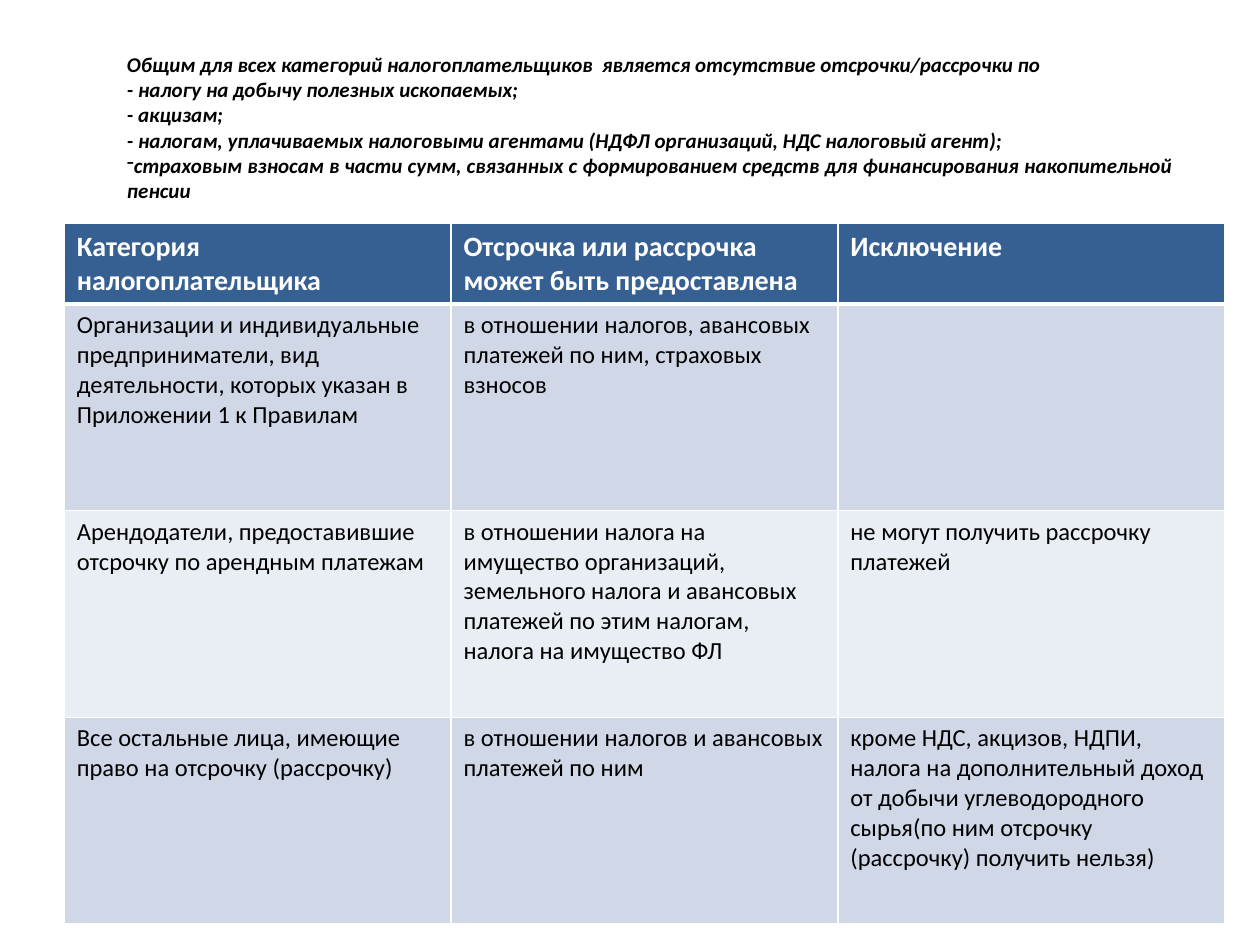
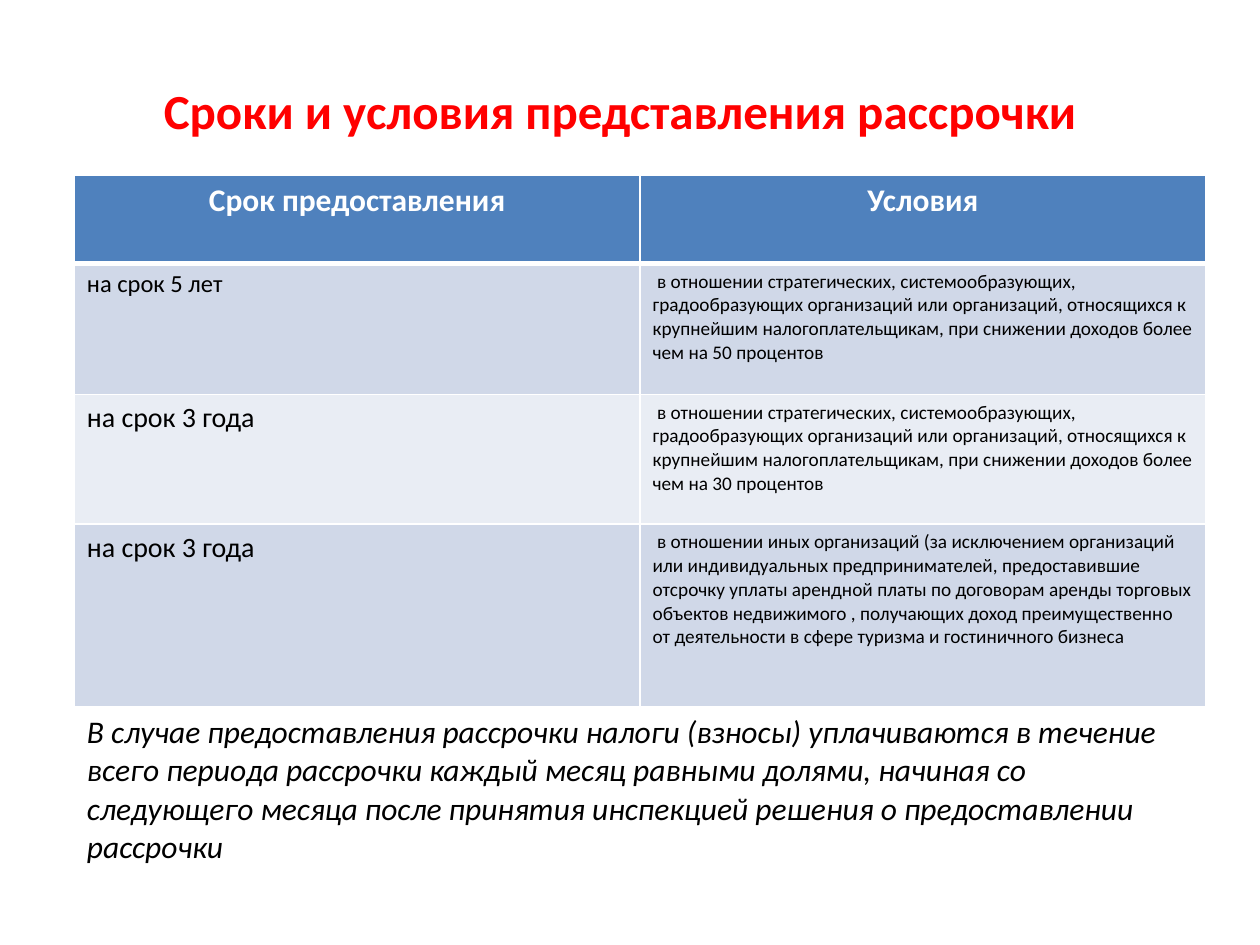
from pptx import Presentation
from pptx.dml.color import RGBColor as Rgb
from pptx.enum.text import MSO_ANCHOR as Anchor, PP_ALIGN as Align
from pptx.oxml.ns import qn
from pptx.util import Inches, Pt
from lxml.etree import SubElement as Sub

HUES = {"white": "FFFFFF", "black": "000000", "red": "FF0000",
        "navy": "376092", "blue": "4F81BD",
        "dark": "D0D8E8", "light": "E9EDF4"}
FONT = "Calibri"

RULES = [
    "Общим для всех категорий налогоплательщиков  является отсутствие отсрочки/рассрочки по",
    "- налогу на добычу полезных ископаемых;",
    "- акцизам;",
    "- налогам, уплачиваемых налоговыми агентами (НДФЛ организаций, НДС налоговый агент);",
]
DASHED = ("страховым взносам в части сумм, связанных с формированием средств "
          "для финансирования накопительной пенсии")

GROUPS = [
    ["Категория налогоплательщика",
     "Отсрочка или рассрочка может быть предоставлена",
     "Исключение"],
    ["Организации и индивидуальные предприниматели, вид деятельности, "
     "которых указан в Приложении 1 к Правилам",
     "в отношении налогов, авансовых платежей по ним, страховых взносов",
     ""],
    ["Арендодатели, предоставившие отсрочку по арендным платежам",
     "в отношении налога на имущество организаций, земельного налога и "
     "авансовых платежей по этим налогам, налога на имущество ФЛ",
     "не могут получить рассрочку платежей"],
    ["Все остальные лица, имеющие право на отсрочку (рассрочку)",
     "в отношении налогов и авансовых платежей по ним",
     "кроме НДС, акцизов, НДПИ, налога на дополнительный доход от добычи "
     "углеводородного сырья(по ним отсрочку (рассрочку) получить нельзя)"],
]

LARGE = (" в отношении стратегических, системообразующих, градообразующих "
         "организаций или организаций, относящихся к крупнейшим "
         "налогоплательщикам, при снижении доходов более чем на {} процентов")
TERMS = [
    ["Срок предоставления", "Условия"],
    ["на срок 5 лет", LARGE.format(50)],
    ["на срок 3 года", LARGE.format(30)],
    ["на срок 3 года",
     " в отношении иных организаций (за исключением организаций или "
     "индивидуальных предпринимателей, предоставившие отсрочку уплаты "
     "арендной платы по договорам аренды торговых объектов недвижимого , "
     "получающих доход преимущественно от деятельности в сфере туризма и "
     "гостиничного бизнеса"],
    ["", ""],
]
NOTE = ("В случае предоставления рассрочки налоги (взносы) уплачиваются в "
        "течение всего периода рассрочки каждый месяц равными долями, начиная "
        "со следующего месяца после принятия инспекцией решения о "
        "предоставлении рассрочки")


def write(para, text, size=14, hue="black", bold=False, slant=False,
          align=Align.LEFT, mark=None):
    para.alignment = align
    if mark:
        props = para._p.get_or_add_pPr()
        props.set("marL", "0")
        props.set("indent", "0")
        Sub(props, qn("a:buChar")).set("char", mark)
    run = para.add_run()
    run.text = text
    font = run.font
    font.name, font.size = FONT, Pt(size)
    font.bold, font.italic = bold, slant
    font.color.rgb = Rgb.from_string(HUES[hue])


def add_box(slide, box, anchor=Anchor.TOP):
    frame = slide.shapes.add_textbox(*map(Inches, box)).text_frame
    frame.word_wrap = True
    frame.vertical_anchor = anchor
    return frame


def edge(cell, side, width):
    line = Sub(cell._tc.get_or_add_tcPr(), qn("a:ln" + side))
    line.set("w", str(Pt(width)))
    Sub(Sub(line, qn("a:solidFill")), qn("a:srgbClr")).set("val", HUES["white"])


def add_grid(slide, box, rows, highs, head):
    wide = len(rows[0])
    grid = slide.shapes.add_table(len(rows), wide, *map(Inches, box)).table
    for col in grid.columns:
        col.width = Inches(box[2] / wide)
    for i, high in enumerate(highs):
        grid.rows[i].height = Inches(high)
        hue = head if i == 0 else "dark" if i % 2 else "light"
        for cell in grid.rows[i].cells:
            edge(cell, "L", 1)
            edge(cell, "R", 1)
            edge(cell, "T", 3 if i == 1 else 1)
            edge(cell, "B", 3 if i == 0 else 1)
            cell.fill.solid()
            cell.fill.fore_color.rgb = Rgb.from_string(HUES[hue])
    return grid


def fill_grid(grid, rows, style):
    for i, row in enumerate(rows):
        for j, text in enumerate(row):
            if text:
                para = grid.cell(i, j).text_frame.paragraphs[0]
                write(para, text, **style(i, j))


def group_style(i, j):
    return {"size": 14} if i else {"size": 16, "hue": "white", "bold": True}


def term_style(i, j):
    if i == 0:
        return {"size": 18, "hue": "white", "bold": True, "align": Align.CENTER}
    return {"size": 11 if j else 14 if i == 1 else 16}


def add_rules(slide, box):
    frame = add_box(slide, box)
    look = {"size": 12, "bold": True, "slant": True, "align": Align.JUSTIFY}
    for i, text in enumerate(RULES):
        para = frame.add_paragraph() if i else frame.paragraphs[0]
        write(para, text, **look)
    write(frame.add_paragraph(), DASHED, mark="-", **look)


def group_slide(slide):
    grid = add_grid(slide, (0.51, 1.77, 9.21, 5.55), GROUPS,
                    [0.63] + [1.64] * 3, "navy")
    fill_grid(grid, GROUPS, group_style)
    add_rules(slide, (0.91, 0.36, 8.5, 1.51))


def term_slide(slide):
    grid = add_grid(slide, (0.59, 1.39, 8.98, 5.66), TERMS,
                    [0.7, 1.04, 1.03, 1.45, 1.44], "blue")
    fill_grid(grid, TERMS, term_style)
    note = grid.cell(4, 0)
    note.merge(grid.cell(4, 1))
    note.fill.background()
    write(note.text_frame.paragraphs[0], NOTE, size=18, slant=True)
    title = add_box(slide, (0.91, 0.6, 8.02, 0.55), Anchor.MIDDLE)
    write(title.paragraphs[0], "Сроки и условия представления рассрочки",
          size=28, hue="red", bold=True, align=Align.CENTER)


def main():
    deck = Presentation()
    deck.slide_width, deck.slide_height = Inches(10), Inches(7.5)
    for build in (group_slide, term_slide):
        build(deck.slides.add_slide(deck.slide_layouts[6]))
    deck.save("out.pptx")


if __name__ == "__main__":
    main()
